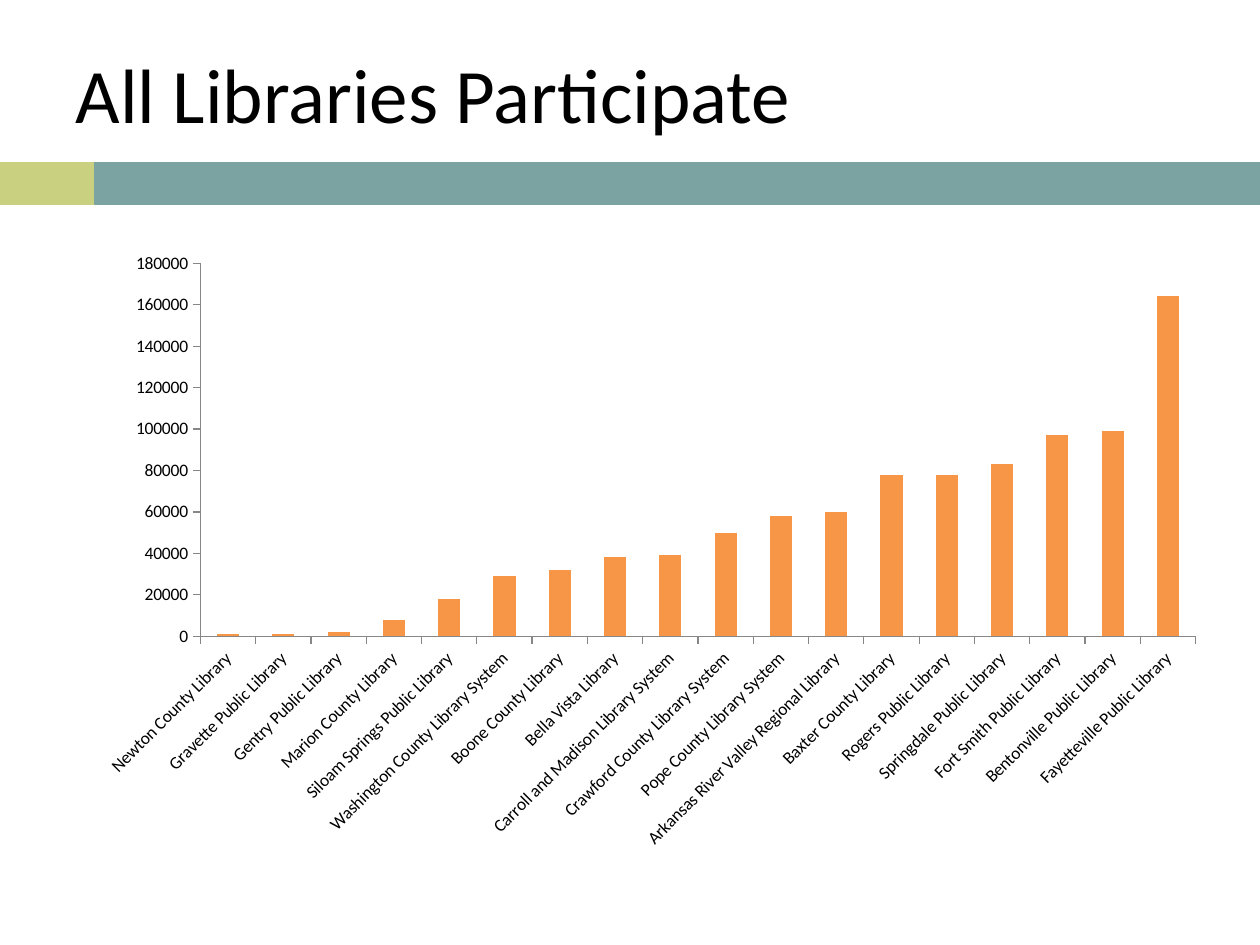
from lxml.etree import SubElement
from pptx import Presentation
from pptx.chart.data import CategoryChartData
from pptx.dml.color import RGBColor
from pptx.enum.chart import XL_CHART_TYPE as ChartType, XL_TICK_MARK as TickMark
from pptx.enum.shapes import MSO_SHAPE as ShapeType
from pptx.enum.text import MSO_ANCHOR as Anchor, PP_ALIGN as Align
from pptx.oxml.ns import qn
from pptx.util import Inches, Pt

WIDTH, HEIGHT = Inches(10), Inches(7.5)
COLORS = {"text": "000000", "accent": "C9D180", "band": "7AA3A1",
          "column": "F79646", "axis": "878787"}
TITLE_FORMAT = {"name": "Calibri", "size": Pt(44), "bold": False}
CHART_FORMAT = {"name": "Calibri", "size": Pt(10), "bold": False}
PLOT_BOX = (Inches(0.92), Inches(0.17), Inches(7.9), Inches(2.96))
LIBRARY_USE = {
    "Newton County Library": 1000,
    "Gravette Public Library": 1000,
    "Gentry Public Library": 2000,
    "Marion County Library": 8000,
    "Siloam Springs Public Library": 18000,
    "Washington County Library System": 29000,
    "Boone County Library": 32000,
    "Bella Vista Library": 38000,
    "Carroll and Madison Library System": 39000,
    "Crawford County Library System": 50000,
    "Pope County Library System": 58000,
    "Arkansas River Valley Regional Library": 60000,
    "Baxter County Library": 78000,
    "Rogers Public Library": 78000,
    "Springdale Public Library": 83000,
    "Fort Smith Public Library": 97000,
    "Bentonville Public Library": 99000,
    "Fayetteville Public Library": 164000,
}


def color(name):
    """Return the named palette color."""
    return RGBColor.from_string(COLORS[name])


def format_font(font, values):
    """Apply format values and the text color to a font."""
    for name, value in values.items():
        setattr(font, name, value)
    font.color.rgb = color("text")


def add_title(slide, box, text):
    """Fill the title placeholder and fit it to the box."""
    title = slide.shapes.title
    for name, value in zip(("left", "top", "width", "height"), box):
        setattr(title, name, value)
    title.text_frame.text = text
    title.text_frame.vertical_anchor = Anchor.MIDDLE
    paragraph = title.text_frame.paragraphs[0]
    paragraph.alignment = Align.LEFT
    format_font(paragraph.runs[0].font, TITLE_FORMAT)


def add_band(slide, box, accent_share):
    """Split the box into an accent block and a long band."""
    left, top, width, height = box
    split = int(width * accent_share)
    parts = (("accent", left, split), ("band", left + split, width - split))
    for name, start, length in parts:
        shape = slide.shapes.add_shape(ShapeType.RECTANGLE, start, top, length, height)
        shape.shadow.inherit = False
        shape.fill.solid()
        shape.fill.fore_color.rgb = color(name)
        shape.line.color.rgb = color(name)
        shape.line.width = Pt(1)


def set_plot_area(chart, chart_size, plot_box):
    """Place the inner plot area, given as a box within the chart."""
    plot_area = chart.plots[0]._element.getparent()
    for old_layout in plot_area.findall(qn("c:layout")):
        plot_area.remove(old_layout)
    layout = SubElement(plot_area, qn("c:layout"))
    plot_area.insert(0, layout)
    manual = SubElement(layout, qn("c:manualLayout"))
    values = {"layoutTarget": "inner", "xMode": "edge", "yMode": "edge"}
    for name, length, whole in zip("xywh", plot_box, chart_size * 2):
        values[name] = length / whole
    for name, value in values.items():
        SubElement(manual, qn(f"c:{name}")).set("val", str(value))


def add_column_chart(slide, box, values):
    """Draw one column for each library in the box."""
    data = CategoryChartData()
    data.categories = list(values)
    data.add_series("Series 1", list(values.values()))
    chart = slide.shapes.add_chart(ChartType.COLUMN_CLUSTERED, *box, data).chart
    chart.has_legend = False
    chart.has_title = False
    format_font(chart.font, CHART_FORMAT)
    plot = chart.plots[0]
    plot.gap_width = 150
    plot.vary_by_categories = False
    fill = plot.series[0].format.fill
    fill.solid()
    fill.fore_color.rgb = color("column")
    for axis in (chart.category_axis, chart.value_axis):
        axis.has_major_gridlines = False
        axis.major_tick_mark = TickMark.OUTSIDE
        axis.minor_tick_mark = TickMark.NONE
        axis.format.line.color.rgb = color("axis")
        axis.format.line.width = Pt(0.75)
        format_font(axis.tick_labels.font, CHART_FORMAT)
    scale = {"minimum_scale": 0, "maximum_scale": 180000, "major_unit": 20000}
    for name, value in scale.items():
        setattr(chart.value_axis, name, value)
    label_body = chart.category_axis._element.find(qn("c:txPr")).find(qn("a:bodyPr"))
    label_body.set("rot", str(-45 * 60000))
    label_body.set("vert", "horz")
    set_plot_area(chart, box[2:], PLOT_BOX)


def main():
    """Build and save the slide."""
    presentation = Presentation()
    presentation.slide_width, presentation.slide_height = WIDTH, HEIGHT
    slide = presentation.slides.add_slide(presentation.slide_layouts[5])
    add_band(slide, (0, Inches(1.29), WIDTH, Inches(0.33)), 0.075)
    add_title(slide, (Inches(0.5), Inches(0.3), Inches(9), Inches(0.87)),
              "All Libraries Participate")
    add_column_chart(slide, (Inches(0.67), Inches(1.92), Inches(9), Inches(4.92)),
                     LIBRARY_USE)
    presentation.save("out.pptx")


if __name__ == "__main__":
    main()
